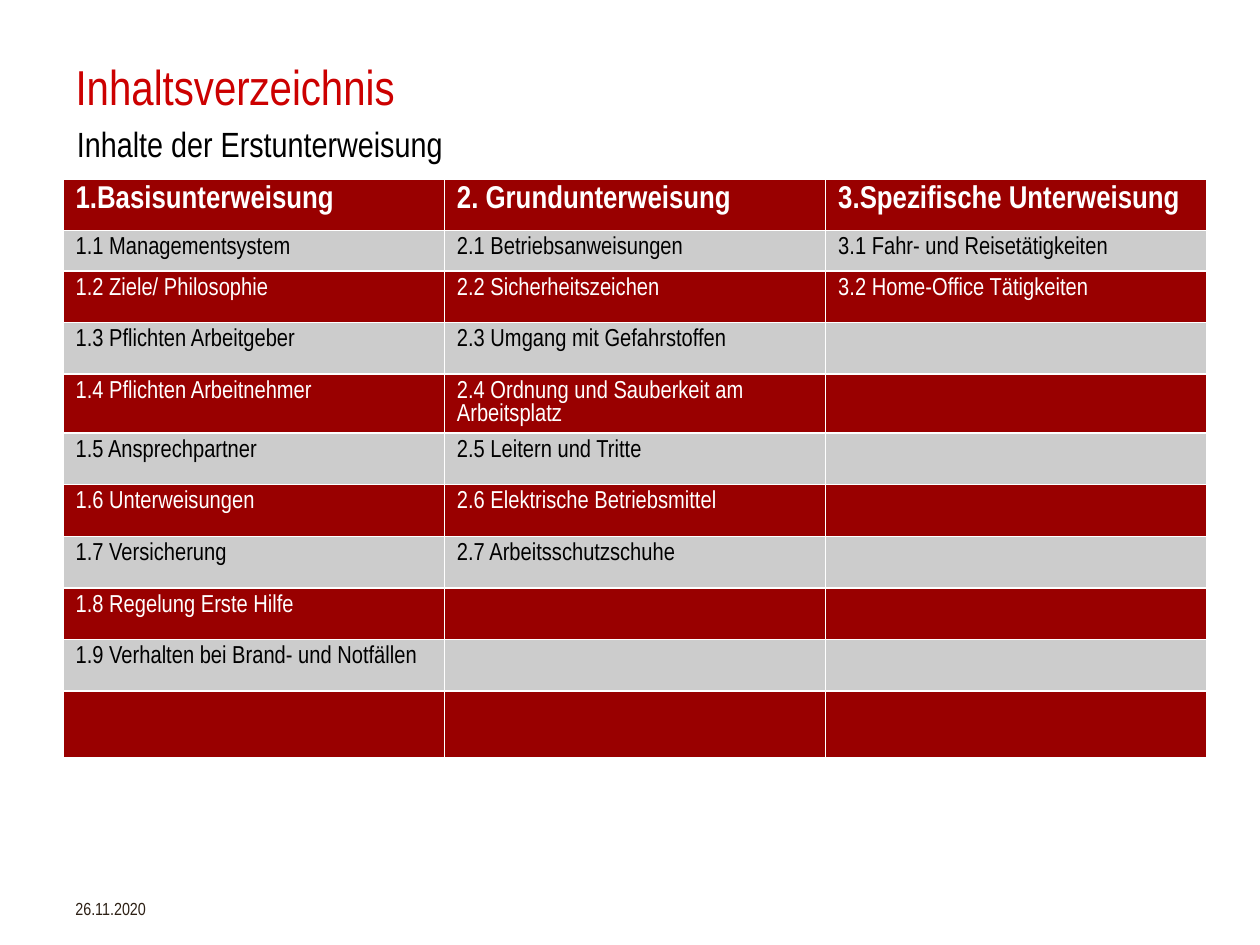
import pptx
import pptx.dml.color
import pptx.enum.text
import pptx.oxml
import pptx.oxml.ns
import pptx.util
from pptx.util import Inches

RED = pptx.dml.color.RGBColor(0xCC, 0x00, 0x00)
DARK_RED = pptx.dml.color.RGBColor(0x99, 0x00, 0x00)
GREY = pptx.dml.color.RGBColor(0xCC, 0xCC, 0xCC)
WHITE = pptx.dml.color.RGBColor(0xFF, 0xFF, 0xFF)
BLACK = pptx.dml.color.RGBColor(0x00, 0x00, 0x00)
BROWN = pptx.dml.color.RGBColor(0x2D, 0x20, 0x15)
FONT_NAME = "Arial Narrow"

HEADINGS = ["1.Basisunterweisung", "2. Grundunterweisung", "3.Spezifische Unterweisung"]
TOPICS = [
    [
        "1.1 Managementsystem",
        "1.2 Ziele/ Philosophie",
        "1.3 Pflichten Arbeitgeber",
        "1.4 Pflichten Arbeitnehmer",
        "1.5 Ansprechpartner",
        "1.6 Unterweisungen",
        "1.7 Versicherung",
        "1.8 Regelung Erste Hilfe",
        "1.9 Verhalten bei Brand- und Notfällen",
    ],
    [
        "2.1 Betriebsanweisungen",
        "2.2 Sicherheitszeichen",
        "2.3 Umgang mit Gefahrstoffen",
        "2.4 Ordnung und Sauberkeit am Arbeitsplatz",
        "2.5 Leitern und Tritte",
        "2.6 Elektrische Betriebsmittel",
        "2.7 Arbeitsschutzschuhe",
    ],
    ["3.1 Fahr- und Reisetätigkeiten", "3.2 Home-Office Tätigkeiten"],
]
ROW_HEIGHTS = [0.41, 0.32] + [0.41] * 8 + [0.53]


def format_font(paragraph, size, color, bold=False):
    """Apply the slide's font to a paragraph."""
    values = {"name": FONT_NAME, "size": pptx.util.Pt(size), "bold": bold}
    for name, value in values.items():
        setattr(paragraph.font, name, value)
    paragraph.font.color.rgb = color


def place_text(shape, box, text, size, color, anchor):
    """Move a text shape to its box, fill it and return its paragraph."""
    for name, value in zip(("left", "top", "width", "height"), box):
        setattr(shape, name, Inches(value))
    values = {
        "text": text,
        "word_wrap": True,
        "auto_size": pptx.enum.text.MSO_AUTO_SIZE.NONE,
        "vertical_anchor": anchor,
    }
    for name, value in values.items():
        setattr(shape.text_frame, name, value)
    paragraph = shape.text_frame.paragraphs[0]
    paragraph.alignment = pptx.enum.text.PP_ALIGN.LEFT
    format_font(paragraph, size, color)
    return paragraph


def add_title(slide, box):
    """Place the slide title in the given box."""
    paragraph = place_text(slide.shapes.title, box, "Inhaltsverzeichnis", 28, RED,
                           pptx.enum.text.MSO_ANCHOR.MIDDLE)
    paragraph.line_spacing = 0.9


def add_subtitle(slide, box):
    """Place the unbulleted body line in the given box."""
    paragraph = place_text(slide.placeholders[1], box, "Inhalte der Erstunterweisung", 20, BLACK,
                           pptx.enum.text.MSO_ANCHOR.TOP)
    properties = paragraph._p.get_or_add_pPr()
    properties.set("marL", "0")
    properties.set("indent", "0")
    properties.insert(0, pptx.oxml.parse_xml(f"<a:buNone {pptx.oxml.ns.nsdecls('a')}/>"))


def add_date(slide, box):
    """Add the date in the given box."""
    shape = slide.shapes.add_textbox(0, 0, 0, 0)
    place_text(shape, box, "26.11.2020", 10, BROWN, pptx.enum.text.MSO_ANCHOR.TOP)


def add_contents_table(slide, box):
    """Add the table of instruction topics in the given box."""
    table = slide.shapes.add_table(len(ROW_HEIGHTS), len(HEADINGS), *map(Inches, box)).table
    for row, height in zip(table.rows, ROW_HEIGHTS):
        row.height = Inches(height)
    for column_index, (heading, topics) in enumerate(zip(HEADINGS, TOPICS)):
        texts = [heading] + topics
        for row_index in range(len(ROW_HEIGHTS)):
            is_dark = row_index % 2 == 0
            is_heading = row_index == 0
            cell = table.cell(row_index, column_index)
            cell.fill.solid()
            cell.fill.fore_color.rgb = DARK_RED if is_dark else GREY
            if row_index < len(texts):
                cell.text = texts[row_index]
                format_font(cell.text_frame.paragraphs[0], 18 if is_heading else 14,
                            WHITE if is_dark else BLACK, is_heading)


def main():
    """Build and save the contents slide."""
    presentation = pptx.Presentation()
    presentation.slide_width = Inches(10)
    presentation.slide_height = Inches(7.5)
    slide = presentation.slides.add_slide(presentation.slide_layouts[1])
    add_title(slide, (0.5, 0.17, 7.08, 1.08))
    add_contents_table(slide, (0.5, 1.42, 9.08, 4.54))
    add_date(slide, (0.5, 7.08, 2.33, 0.27))
    add_subtitle(slide, (0.51, 0.92, 6.56, 0.41))
    presentation.save("out.pptx")


if __name__ == "__main__":
    main()
